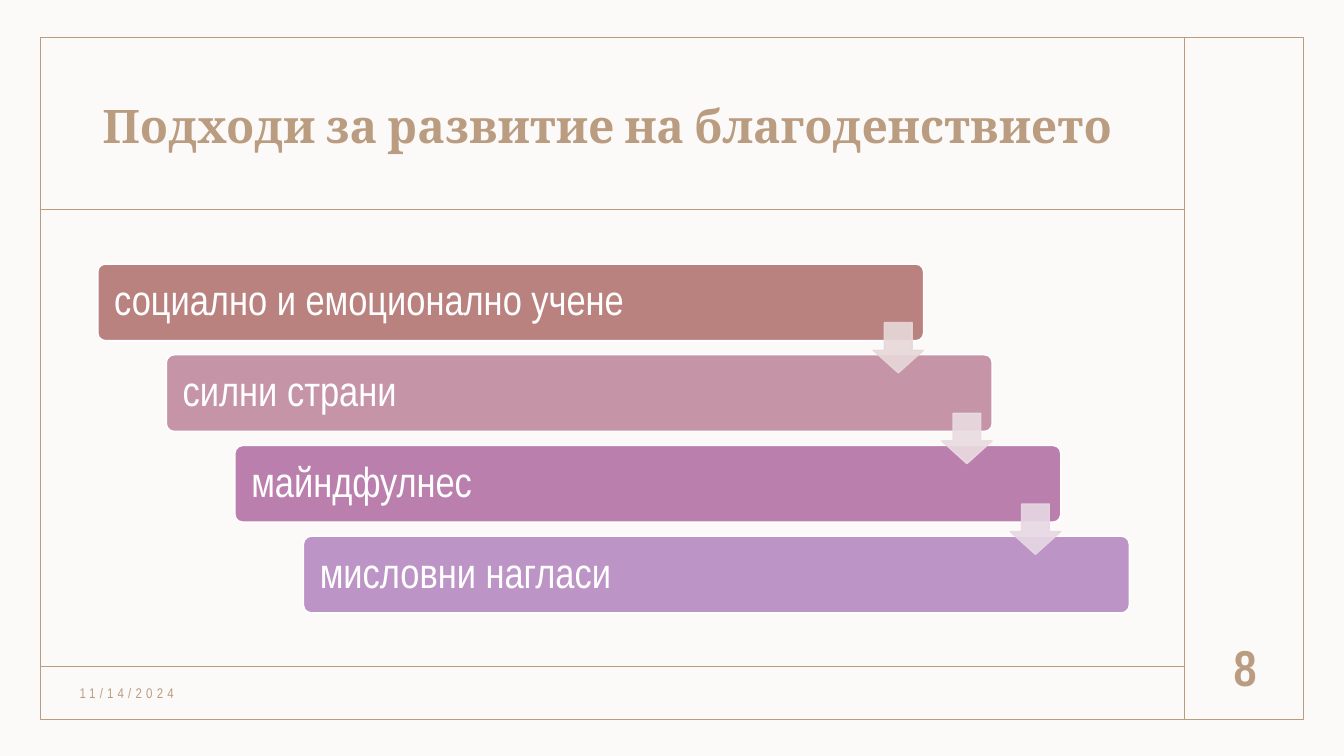
from dataclasses import dataclass

from lxml.etree import SubElement
from pptx import Presentation
from pptx.dml.color import RGBColor
from pptx.enum.shapes import MSO_CONNECTOR, MSO_SHAPE
from pptx.enum.text import MSO_ANCHOR, PP_ALIGN
from pptx.oxml.ns import qn
from pptx.shapes.autoshape import Shape
from pptx.slide import Slide
from pptx.util import Inches, Pt


@dataclass(frozen=True)
class Theme:
    background: str = "FCFAF9"
    accent: str = "BA9C80"
    white: str = "FFFFFF"
    heading_font: str = "Cambria"
    body_font: str = "Arial Narrow"
    title_size: int = 33
    step_size: int = 30
    date_size: int = 10
    number_size: int = 36
    line_width: int = 1
    arrow_opacity: int = 90


@dataclass(frozen=True)
class Area:
    left: float
    top: float
    width: float
    height: float

    def lengths(self) -> list[int]:
        return [Inches(v) for v in (self.left, self.top, self.width, self.height)]


@dataclass(frozen=True)
class Rule:
    start: tuple[float, float]
    end: tuple[float, float]


@dataclass(frozen=True)
class Step:
    text: str
    color: str
    arrow_color: str = ""


@dataclass(frozen=True)
class Label:
    text: str
    area: Area
    font: str
    size: int
    bold: bool = False
    alignment: PP_ALIGN = PP_ALIGN.LEFT
    line_spacing: float = 1.0
    letter_spacing: int = 0


THEME = Theme()

FRAME = Area(0.4, 0.37, 12.53, 6.77)
RULES = [
    Rule((11.75, 0.37), (11.75, 7.13)),
    Rule((0.41, 2.08), (11.75, 2.08)),
    Rule((0.41, 6.61), (11.75, 6.61)),
]
LABELS = [
    Label("Подходи за развитие на благоденствието", Area(0.92, 0.6, 10.42, 1.36),
          THEME.heading_font, THEME.title_size, bold=True, line_spacing=0.9),
    Label("11/14/2024", Area(0.69, 6.72, 3.45, 0.31),
          THEME.body_font, THEME.date_size, letter_spacing=3),
    Label("8", Area(11.83, 6.2, 1.04, 0.83), THEME.body_font, THEME.number_size,
          bold=True, alignment=PP_ALIGN.CENTER),
]
STEPS = [
    Step("социално и емоционално учене", "BA827F", "E7D8D8"),
    Step("силни страни", "C594A6", "EADCE1"),
    Step("майндфулнес", "BA7FAD", "E7D8E3"),
    Step("мисловни нагласи", "BC94C5"),
]
FIRST_BAR = Area(0.97, 2.62, 8.19, 0.76)
STEP_RIGHT = 0.68
STEP_DOWN = 0.9
BAR_INSET = 0.14
ARROW_SIDE = 0.5
ARROW_DROP = 0.58


def rgb(color: str) -> RGBColor:
    return RGBColor.from_string(color)


def add_box(page: Slide, kind: MSO_SHAPE, area: Area, fill: str, line: str) -> Shape:
    """Add a preset shape; an empty fill leaves it hollow."""
    box = page.shapes.add_shape(kind, *area.lengths())
    box.shadow.inherit = False
    if fill:
        box.fill.solid()
        box.fill.fore_color.rgb = rgb(fill)
    else:
        box.fill.background()
    box.line.color.rgb = rgb(line)
    box.line.width = Pt(THEME.line_width)
    return box


def write_text(box: Shape, text: str, font: str, size: int, color: str,
               line_spacing: float, alignment: PP_ALIGN = PP_ALIGN.LEFT,
               bold: bool = False, letter_spacing: int = 0) -> None:
    frame = box.text_frame
    frame.text = text
    frame.word_wrap = True
    frame.vertical_anchor = MSO_ANCHOR.MIDDLE
    para = frame.paragraphs[0]
    para.alignment = alignment
    para.line_spacing = line_spacing
    span = para.runs[0]
    span.font.name = font
    span.font.size = Pt(size)
    span.font.bold = bold
    span.font.color.rgb = rgb(color)
    if letter_spacing:
        span.font._element.set("spc", str(letter_spacing * 100))


def add_label(page: Slide, label: Label) -> None:
    box = page.shapes.add_textbox(*label.area.lengths())
    write_text(box, label.text, label.font, label.size, THEME.accent,
               label.line_spacing, label.alignment, label.bold, label.letter_spacing)


def add_rule(page: Slide, rule: Rule) -> None:
    ends = [Inches(v) for v in (*rule.start, *rule.end)]
    line = page.shapes.add_connector(MSO_CONNECTOR.STRAIGHT, *ends)
    line.line.color.rgb = rgb(THEME.accent)
    line.line.width = Pt(THEME.line_width)
    SubElement(line._element.spPr, qn("a:effectLst"))


def bar_area(index: int) -> Area:
    return Area(FIRST_BAR.left + index * STEP_RIGHT, FIRST_BAR.top + index * STEP_DOWN,
                FIRST_BAR.width, FIRST_BAR.height)


def add_bar(page: Slide, step: Step, area: Area) -> None:
    bar = add_box(page, MSO_SHAPE.ROUNDED_RECTANGLE, area, step.color, THEME.white)
    bar.adjustments[0] = 0.1
    bar.text_frame.margin_left = bar.text_frame.margin_right = Inches(BAR_INSET)
    write_text(bar, step.text, THEME.body_font, THEME.step_size, THEME.white, 0.9)


def add_arrow(page: Slide, step: Step, bar: Area) -> None:
    """Add the translucent arrow leading from a bar to the next one."""
    area = Area(bar.left + bar.width - ARROW_SIDE, bar.top + ARROW_DROP,
                ARROW_SIDE, ARROW_SIDE)
    arrow = add_box(page, MSO_SHAPE.DOWN_ARROW, area, step.arrow_color, step.arrow_color)
    arrow.adjustments[0] = 0.55
    arrow.adjustments[1] = 0.45
    for color in arrow._element.spPr.iter(qn("a:srgbClr")):
        SubElement(color, qn("a:alpha"), val=str(THEME.arrow_opacity * 1000))


def main() -> None:
    deck = Presentation()
    deck.slide_width = Inches(13.33)
    deck.slide_height = Inches(7.5)
    page = deck.slides.add_slide(deck.slide_layouts[6])
    page.background.fill.solid()
    page.background.fill.fore_color.rgb = rgb(THEME.background)

    add_box(page, MSO_SHAPE.RECTANGLE, FRAME, "", THEME.accent)
    for rule in RULES:
        add_rule(page, rule)
    for label in LABELS:
        add_label(page, label)
    for index, step in enumerate(STEPS):
        add_bar(page, step, bar_area(index))
    for index, step in enumerate(STEPS[:-1]):
        add_arrow(page, step, bar_area(index))

    deck.save("out.pptx")


if __name__ == "__main__":
    main()
